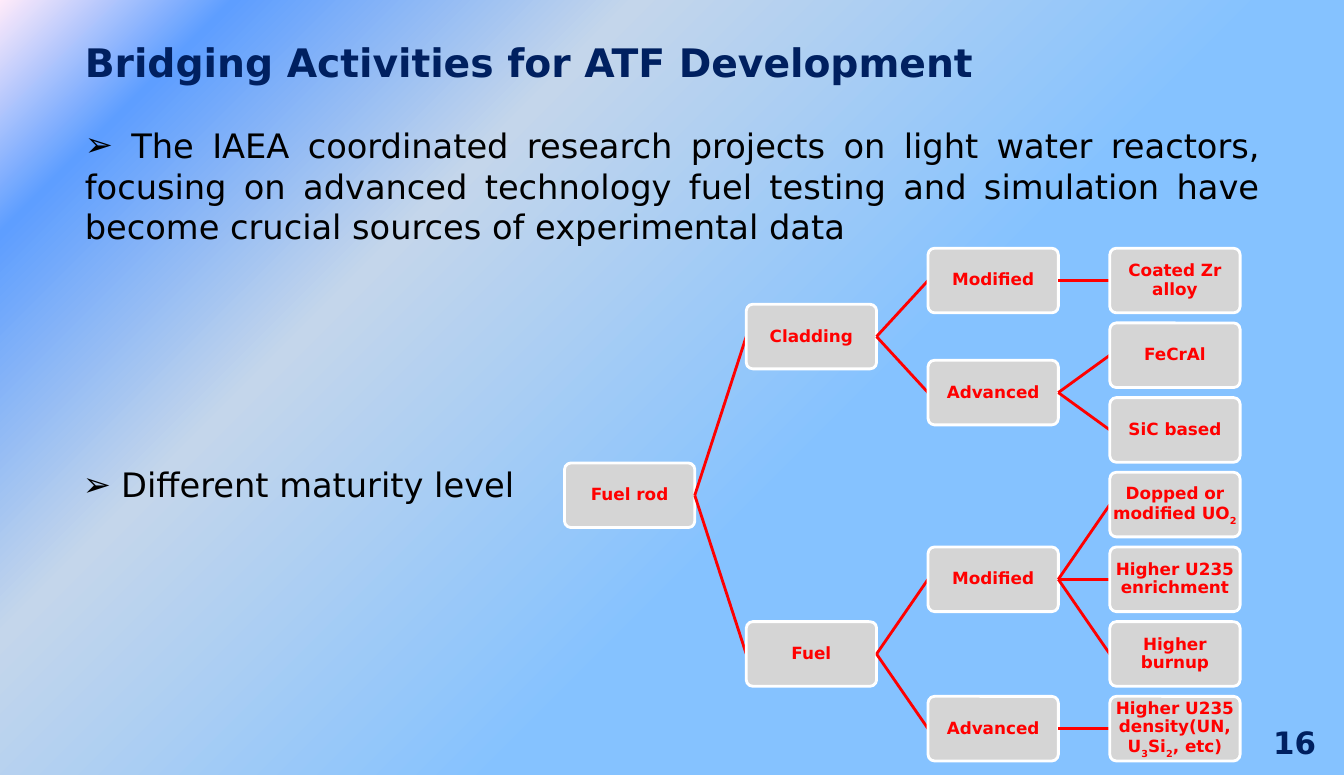
import dataclasses

import pptx
import pptx.dml.color
import pptx.enum.shapes
import pptx.enum.text
import pptx.oxml
import pptx.oxml.ns
import pptx.util

Inches = pptx.util.Inches
ALIGN = pptx.enum.text.PP_ALIGN
ANCHOR = pptx.enum.text.MSO_ANCHOR


@dataclasses.dataclass(frozen=True)
class Theme:
    font: str = "DejaVu Sans"
    navy: str = "002060"
    black: str = "000000"
    red: str = "FF0000"
    grey: str = "D5D5D5"
    white: str = "FFFFFF"
    title_size: int = 28
    body_size: int = 24
    number_size: int = 22
    node_size: int = 12
    line_width: int = 2
    gradient: tuple = ((40, "85C2FF"), (70, "C4D6EB"), (89, "5E9EFF"), (100, "FFEBFA"))


THEME = Theme()

# Each node is (label, children); text between underscores is subscript
FUEL_TREE = ("Fuel rod", [
    ("Cladding", [
        ("Modified", [("Coated Zr alloy", [])]),
        ("Advanced", [("FeCrAl", []), ("SiC based", [])]),
    ]),
    ("Fuel", [
        ("Modified", [
            ("Dopped or modified UO_2_", []),
            ("Higher U235 enrichment", []),
            ("Higher burnup", []),
        ]),
        ("Advanced", [("Higher U235 density(UN, U_3_Si_2_, etc)", [])]),
    ]),
])


def rgb(value):
    return pptx.dml.color.RGBColor.from_string(value)


def element(xml):
    namespaces = pptx.oxml.ns.nsdecls("a", "p")
    return pptx.oxml.parse_xml(xml.replace(" NS", " " + namespaces, 1))


def place(shape, box):
    shape.left, shape.top, shape.width, shape.height = map(Inches, box)


def write_text(shape, text, *, size, color, bold=False, align=ALIGN.LEFT,
               anchor=ANCHOR.TOP, insets=(0.1, 0.05), wrap=True,
               line_spacing=1.0, bullet=None, indent=0):
    frame = shape.text_frame
    frame.auto_size = pptx.enum.text.MSO_AUTO_SIZE.NONE
    frame.word_wrap = wrap
    frame.vertical_anchor = anchor
    frame.margin_left = frame.margin_right = Inches(insets[0])
    frame.margin_top = frame.margin_bottom = Inches(insets[1])
    paragraph = frame.paragraphs[0]
    paragraph.alignment = align
    paragraph.line_spacing = line_spacing
    paragraph.space_before = pptx.util.Pt(0)
    for index, part in enumerate(text.split("_")):
        if not part:
            continue
        run = paragraph.add_run()
        run.text = part
        run.font.name = THEME.font
        run.font.size = pptx.util.Pt(size)
        run.font.bold = bold
        run.font.color.rgb = rgb(color)
        if index % 2:
            run.font._element.set("baseline", "-25000")
    if bullet:
        properties = paragraph._p.get_or_add_pPr()
        properties.set("marL", str(Inches(indent)))
        properties.set("indent", str(-Inches(indent)))
        properties.append(element(f'<a:buFont NS typeface="{THEME.font}"/>'))
        properties.append(element(f'<a:buChar NS char="{bullet}"/>'))


def paint_background(slide):
    slide.background.fill.solid()
    properties = slide.element.find(".//" + pptx.oxml.ns.qn("p:bgPr"))
    stops = "".join(
        f'<a:gs pos="{position * 1000}"><a:srgbClr val="{color}"/></a:gs>'
        for position, color in THEME.gradient)
    gradient = element(
        f'<a:gradFill NS rotWithShape="1"><a:gsLst>{stops}</a:gsLst>'
        '<a:path path="circle"><a:fillToRect l="100000" t="100000"/></a:path>'
        '</a:gradFill>')
    properties.replace(properties[0], gradient)


def add_title(slide, box):
    title = slide.shapes.title
    place(title, box)
    write_text(title, "Bridging Activities for ATF Development", bold=True,
               size=THEME.title_size, color=THEME.navy, insets=(0.12, 0.06))


def add_statement(slide, box):
    statement = slide.placeholders[1]
    place(statement, box)
    write_text(statement, " The IAEA coordinated research projects on light water "
               "reactors, focusing on advanced technology fuel testing and "
               "simulation have become crucial sources of experimental data",
               size=THEME.body_size, color=THEME.black, align=ALIGN.JUSTIFY,
               insets=(0.12, 0.06), bullet="➢")


def add_maturity_note(slide, box):
    note = slide.placeholders[2]
    place(note, box)
    write_text(note, "Different maturity level", size=THEME.body_size,
               color=THEME.black, wrap=False, bullet="➢", indent=0.38)


def add_page_number(slide, box):
    number = slide.shapes.add_textbox(*map(Inches, box))
    write_text(number, "16", size=THEME.number_size, color=THEME.navy, bold=True)


def count_leaves(node):
    return sum(map(count_leaves, node[1])) or 1


def middle_row(node, first_row):
    """A leaf takes one row; a parent sits midway between its outer children."""
    children = node[1]
    if not children:
        return first_row
    last_start = first_row + count_leaves(node) - count_leaves(children[-1])
    return (middle_row(children[0], first_row)
            + middle_row(children[-1], last_start)) / 2


def add_tree(slide, box, tree):
    left, top, width, height = box
    node_width, node_height = 1.29, 0.64
    column_step = (width - node_width) / 3
    row_step = (height - node_height) / (count_leaves(tree) - 1)

    def add_branch(node, column, first_row, parent=None):
        # The line goes in first so that the node covers its end
        if parent is not None:
            line = slide.shapes.add_connector(
                pptx.enum.shapes.MSO_CONNECTOR.STRAIGHT, 0, 0, 0, 0)
            line.line.color.rgb = rgb(THEME.red)
            line.line.width = pptx.util.Pt(THEME.line_width)
            line._element.spPr.append(element("<a:effectLst NS/>"))
        shape = slide.shapes.add_shape(
            pptx.enum.shapes.MSO_SHAPE.ROUNDED_RECTANGLE,
            Inches(left + column * column_step),
            Inches(top + middle_row(node, first_row) * row_step),
            Inches(node_width), Inches(node_height))
        shape.adjustments[0] = 0.1
        shape.shadow.inherit = False
        shape.fill.solid()
        shape.fill.fore_color.rgb = rgb(THEME.grey)
        shape.line.color.rgb = rgb(THEME.white)
        shape.line.width = pptx.util.Pt(THEME.line_width)
        write_text(shape, node[0], size=THEME.node_size, color=THEME.red, bold=True,
                   align=ALIGN.CENTER, anchor=ANCHOR.MIDDLE,
                   insets=(0.01, 0.01), line_spacing=0.9)
        if parent is not None:
            line.begin_connect(parent, 3)
            line.end_connect(shape, 1)
        for child in node[1]:
            add_branch(child, column + 1, first_row, shape)
            first_row += count_leaves(child)

    add_branch(tree, 0, 0)


def main():
    presentation = pptx.Presentation()
    # The page is 958.25 points wide and 552.875 points high
    presentation.slide_width = pptx.util.Emu(12169775)
    presentation.slide_height = pptx.util.Emu(7021513)
    two_content_layout = presentation.slide_layouts[3]
    slide = presentation.slides.add_slide(two_content_layout)
    paint_background(slide)
    add_title(slide, (0.72, 0.32, 9.36, 0.8))
    add_statement(slide, (0.72, 1.18, 11.88, 2.54))
    add_maturity_note(slide, (0.72, 4.55, 4.65, 0.5))
    add_page_number(slide, (12.51, 7.12, 0.8, 0.47))
    add_tree(slide, (5.59, 2.46, 6.69, 5.08), FUEL_TREE)
    presentation.save("out.pptx")


if __name__ == "__main__":
    main()
